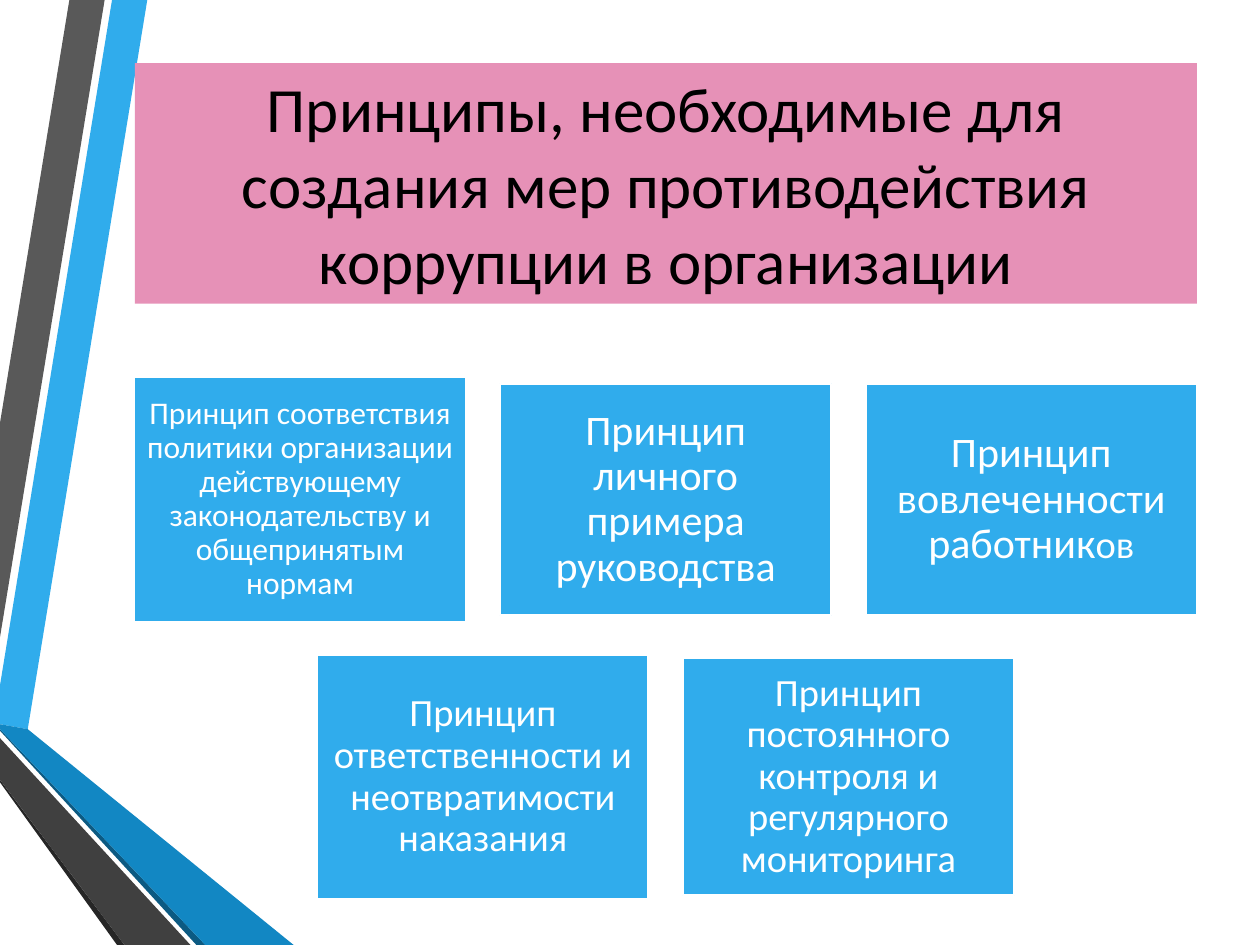
from dataclasses import dataclass

from pptx import Presentation
from pptx import util as u
from pptx.dml.color import RGBColor
from pptx.enum import text

BLUE = RGBColor(0x30, 0xAC, 0xEC)
DEEP_BLUE = RGBColor(0x12, 0x87, 0xC3)
NAVY = RGBColor(0x0C, 0x5A, 0x82)
GREY = RGBColor(0x59, 0x59, 0x59)
DARK_GREY = RGBColor(0x40, 0x40, 0x40)
CHARCOAL = RGBColor(0x26, 0x26, 0x26)
PINK = RGBColor(0xE6, 0x91, 0xB7)
BLACK = RGBColor(0, 0, 0)
WHITE = RGBColor(0xFF, 0xFF, 0xFF)

FONT = "Calibri"
PAGE_WIDTH, PAGE_HEIGHT = 25.4, 19.05
# Card grid, in centimetres
GRID_CENTRE = 13.42
CARD_WIDTH = 6.68
CARD_STEP = 7.37


@dataclass
class Band:
    color: RGBColor
    points: list[tuple[float, float]]


@dataclass
class Card:
    height: float
    inset: float
    spans: list[tuple[str, int]]


@dataclass
class Row:
    centre: float
    cards: list[Card]


BANDS = [
    Band(BLUE, [(0, 13.82), (0, 14.6), (0.56, 14.7), (2.97, 0), (2.26, 0)]),
    Band(GREY, [(2.11, 0), (1.4, 0), (0, 8.53), (0, 12.85)]),
    Band(CHARCOAL, [(0, 15.72), (0, 15.77), (2.36, PAGE_HEIGHT), (2.51, PAGE_HEIGHT)]),
    Band(NAVY, [(0, 14.7), (0, 14.73), (3.96, PAGE_HEIGHT), (4.14, PAGE_HEIGHT)]),
    Band(DEEP_BLUE, [(0, 14.7), (4.14, PAGE_HEIGHT), (5.92, PAGE_HEIGHT),
                     (0.56, 14.7), (0, 14.6)]),
    Band(DARK_GREY, [(0, 15.72), (2.51, PAGE_HEIGHT), (3.84, PAGE_HEIGHT), (0, 14.88)]),
]

TITLE = "Принципы, необходимые для создания мер противодействия коррупции в организации"

ROWS = [
    Row(10.07, [
        Card(4.93, 0.18, [("Принцип соответствия политики организации действующему "
                           "законодательству и общепринятым нормам", 18)]),
        Card(4.67, 0.25, [("Принцип личного примера руководства", 24)]),
        Card(4.67, 0.25, [("Принцип вовлеченности работник", 24), ("ов", 22)]),
    ]),
    Row(15.66, [
        Card(4.93, 0.23, [("Принцип ответственности и неотвратимости наказания", 22)]),
        Card(4.78, 0.23, [("Принцип постоянного контроля и регулярного мониторинга", 22)]),
    ]),
]


def set_values(target, values: dict) -> None:
    for name, value in values.items():
        setattr(target, name, value)


def paint(shape, color: RGBColor) -> None:
    shape.fill.solid()
    shape.fill.fore_color.rgb = color


def write(shape, spans: list[tuple[str, int]], color: RGBColor,
          spacing: float, inset: float) -> None:
    margins = {f"margin_{side}": u.Cm(inset) for side in ("left", "right", "top", "bottom")}
    set_values(shape.text_frame, margins | {
        "word_wrap": True,
        "auto_size": text.MSO_AUTO_SIZE.NONE,
        "vertical_anchor": text.MSO_ANCHOR.MIDDLE,
    })
    para = shape.text_frame.paragraphs[0]
    set_values(para, {"alignment": text.PP_ALIGN.CENTER, "line_spacing": spacing})
    for words, size in spans:
        span = para.add_run()
        span.text = words
        set_values(span.font, {"name": FONT, "size": u.Pt(size)})
        span.font.color.rgb = color


def draw_band(page, band: Band) -> None:
    start, *rest = [(u.Cm(x), u.Cm(y)) for x, y in band.points]
    builder = page.shapes.build_freeform(*start)
    builder.add_line_segments(rest, close=True)
    shape = builder.convert_to_shape()
    shape.shadow.inherit = False
    paint(shape, band.color)
    shape.line.fill.background()


def draw_row(page, row: Row) -> None:
    first = GRID_CENTRE - (len(row.cards) - 1) / 2 * CARD_STEP - CARD_WIDTH / 2
    for index, card in enumerate(row.cards):
        box = page.shapes.add_shape(
            1, u.Cm(first + index * CARD_STEP), u.Cm(row.centre - card.height / 2),
            u.Cm(CARD_WIDTH), u.Cm(card.height))
        box.shadow.inherit = False
        paint(box, BLUE)
        box.line.color.rgb = WHITE
        box.line.width = u.Pt(1.25)
        write(box, card.spans, WHITE, 0.9, card.inset)


def draw_title(page) -> None:
    title = page.shapes.title
    set_values(title, {"left": u.Cm(2.72), "top": u.Cm(1.27),
                       "width": u.Cm(21.41), "height": u.Cm(4.85)})
    paint(title, PINK)
    write(title, [(TITLE, 36)], BLACK, 1.0, 0.25)
    # Bring the title in front of the bands
    title.element.getparent().append(title.element)


def main() -> None:
    deck = Presentation()
    set_values(deck, {"slide_width": u.Cm(PAGE_WIDTH), "slide_height": u.Cm(PAGE_HEIGHT)})
    page = deck.slides.add_slide(deck.slide_layouts.get_by_name("Title Only"))

    # Side decoration
    for band in BANDS:
        draw_band(page, band)

    # Heading and principles
    draw_title(page)
    for row in ROWS:
        draw_row(page, row)

    deck.save("out.pptx")


if __name__ == "__main__":
    main()
